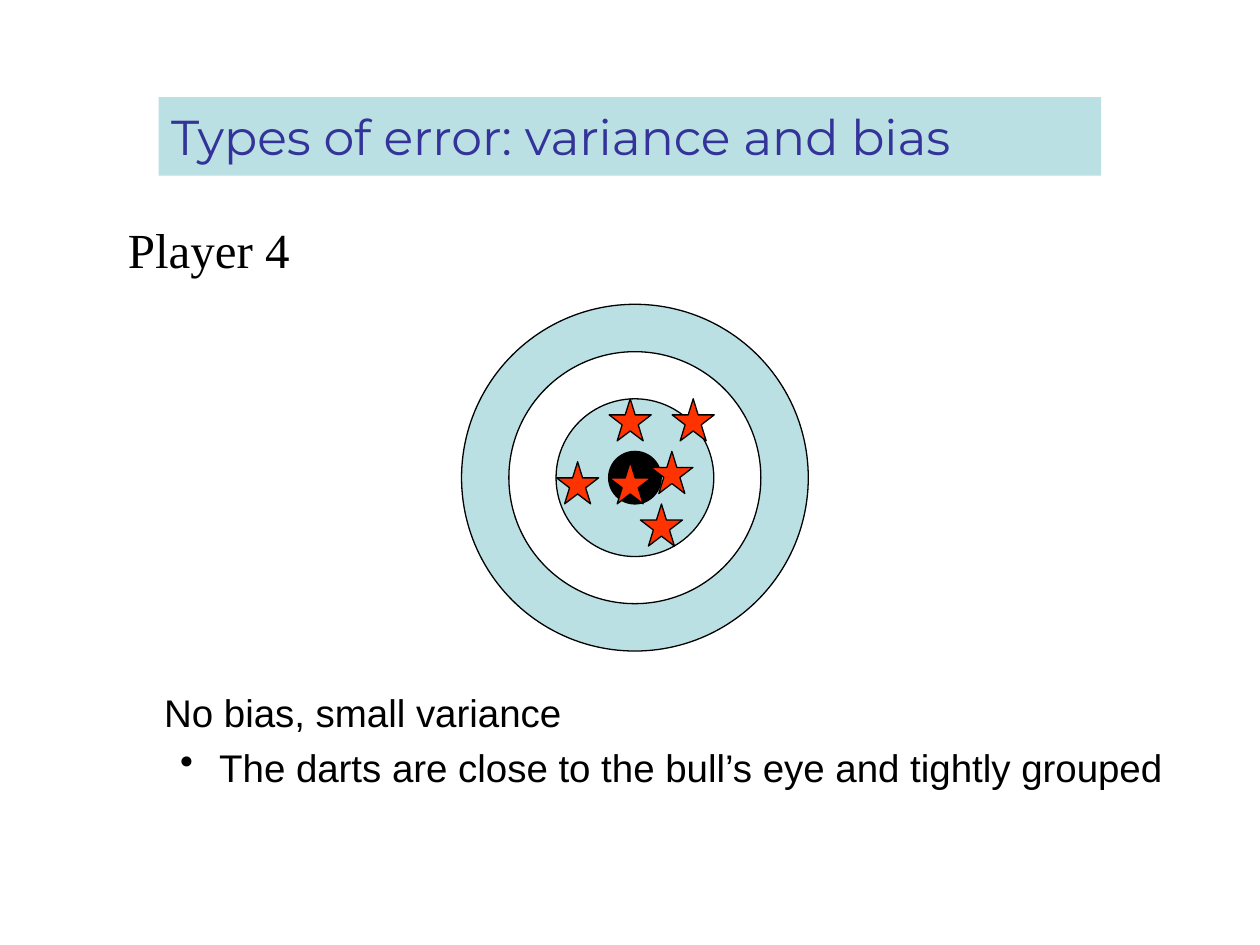
from dataclasses import dataclass

from lxml import etree
from pptx import Presentation
from pptx import util as u
from pptx.dml.color import RGBColor
from pptx.enum import shapes, text
from pptx.oxml.ns import qn


@dataclass(frozen=True)
class Theme:
    pale: str = "BBE0E3"
    black: str = "000000"
    dart: str = "FF3300"
    title: str = "333399"
    heading_size: float = 28
    body_size: float = 22
    line_width: float = 0.75


def write(paragraph, content, *, font, size, color, before=0, margin=0, hanging=0, bullet=None):
    """Fill a paragraph; margin and hanging indent are in centimetres."""
    run = paragraph.add_run()
    run.text = content
    run.font.name = font
    run.font.size = u.Pt(size)
    run.font.color.rgb = RGBColor.from_string(color)
    paragraph.alignment = text.PP_ALIGN.LEFT
    paragraph.space_before = u.Pt(before)
    properties = paragraph._p.get_or_add_pPr()
    properties.set("marL", str(u.Cm(margin)))
    properties.set("indent", str(-u.Cm(hanging)))
    if bullet:
        etree.SubElement(properties, qn("a:buChar"), char=bullet)


class SlideBuilder:
    def __init__(self, slide, theme):
        self.slide = slide
        self.theme = theme

    def shape(self, kind, left, top, width, height, fill, outlined=True):
        shape = self.slide.shapes.add_shape(kind, u.Cm(left), u.Cm(top), u.Cm(width), u.Cm(height))
        shape.shadow.inherit = False
        shape.fill.solid()
        shape.fill.fore_color.rgb = RGBColor.from_string(fill)
        if outlined:
            shape.line.color.rgb = RGBColor.from_string(self.theme.black)
            shape.line.width = u.Pt(self.theme.line_width)
        else:
            shape.line.fill.background()
        return shape

    def circle(self, center, diameter, fill, kind=shapes.MSO_SHAPE.OVAL):
        left, top = (position - diameter / 2 for position in center)
        return self.shape(kind, left, top, diameter, diameter, fill)

    def ring(self, center, outer, inner, fill):
        ring = self.circle(center, outer, fill, shapes.MSO_SHAPE.DONUT)
        ring.adjustments[0] = (outer - inner) / 2 / outer

    def dart(self, left, top, size=0.85):
        self.shape(shapes.MSO_SHAPE.STAR_5_POINT, left, top, size, size, self.theme.dart)

    def title(self, content, left, top, width, height):
        bar = self.shape(shapes.MSO_SHAPE.RECTANGLE, left, top, width, height,
                         self.theme.pale, outlined=False)
        bar.text_frame.vertical_anchor = text.MSO_ANCHOR.MIDDLE
        write(bar.text_frame.paragraphs[0], content, font="Montserrat",
              size=self.theme.heading_size, color=self.theme.title)

    def text_box(self, left, top, width, height, wrap=True):
        box = self.slide.shapes.add_textbox(u.Cm(left), u.Cm(top), u.Cm(width), u.Cm(height))
        box.text_frame.word_wrap = wrap
        return box.text_frame


def main():
    presentation = Presentation()
    presentation.slide_width, presentation.slide_height = u.Cm(25.4), u.Cm(19.05)
    theme = Theme()
    builder = SlideBuilder(presentation.slides.add_slide(presentation.slide_layouts[6]), theme)

    bullseye = (12.8, 9.63)
    builder.ring(bullseye, 6.99, 5.08, theme.pale)
    builder.circle(bullseye, 3.18, theme.pale)
    builder.circle(bullseye, 1.06, theme.black)
    for left, top in [(12.91, 10.16), (13.55, 8.04), (13.12, 9.1),
                      (11.22, 9.31), (12.28, 9.31), (12.28, 8.04)]:
        builder.dart(left, top)

    body = builder.text_box(2.11, 13.76, 21.6, 1.9)
    body_style = dict(font="Arial", size=theme.body_size, color=theme.black, before=5)
    write(body.paragraphs[0], "No bias, small variance", margin=0.95, **body_style)
    write(body.add_paragraph(), "The darts are close to the bull’s eye and tightly grouped",
          margin=2.06, hanging=0.79, bullet="•", **body_style)

    player = builder.text_box(2.33, 4.3, 4, 1.44, wrap=False)
    write(player.paragraphs[0], "Player 4", font="Times New Roman",
          size=theme.heading_size, color=theme.black)

    builder.title("Types of error: variance and bias", 3.2, 1.96, 19, 1.58)
    presentation.save("out.pptx")


if __name__ == "__main__":
    main()
